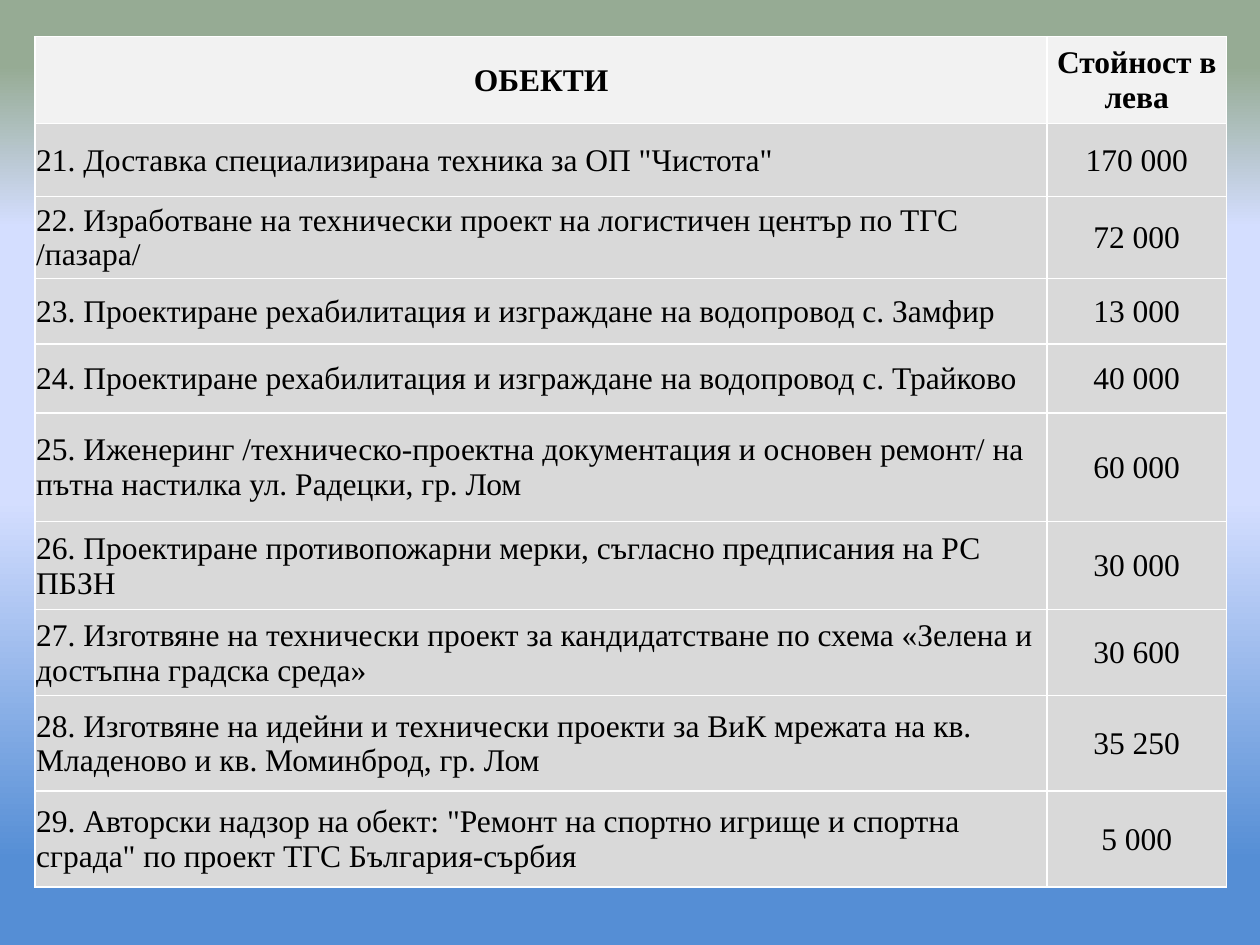
from lxml import etree
from pptx import Presentation
from pptx.dml.color import RGBColor
from pptx.enum.text import MSO_ANCHOR, PP_ALIGN
from pptx.oxml.ns import qn
from pptx.util import Cm, Pt

LEFT, CENTER = PP_ALIGN.LEFT, PP_ALIGN.CENTER
MIDDLE = MSO_ANCHOR.MIDDLE

BLACK, WHITE = "000000", "FFFFFF"
HEADER_FILL, BODY_FILL = "F2F2F2", "D9D9D9"
SKY_STOPS = [(9, "558ED5"), (47, "D4DEFF"), (76, "D4DEFF"), (93, "96AB94")]
CELL_FORMAT = {
    "vertical_anchor": MIDDLE,
    "margin_left": Cm(0.02),
    "margin_right": Cm(0.02),
    "margin_top": Cm(0.02),
    "margin_bottom": Cm(0),
}
FONT_FORMAT = {"name": "Times New Roman", "size": Pt(18)}

TABLE_BOX = (0.71, 0.74, 24.01, 17.14)
PRICE_WIDTH = 3.61
ROWS = [
    (1.75, "ОБЕКТИ", "Стойност в лева"),
    (1.47, '21. Доставка специализирана техника за ОП "Чистота"', "170 000"),
    (1.65, "22. Изработване на технически проект на логистичен център по ТГС /пазара/", "72 000"),
    (1.32, "23. Проектиране рехабилитация и изграждане на водопровод с. Замфир", "13 000"),
    (1.4, "24. Проектиране рехабилитация и изграждане на водопровод с. Трайково", "40 000"),
    (2.18, "25. Иженеринг /техническо-проектна документация и основен ремонт/ "
           "на пътна настилка ул. Радецки, гр. Лом", "60 000"),
    (1.78, "26. Проектиране противопожарни мерки, съгласно предписания на РС ПБЗН", "30 000"),
    (1.73, "27. Изготвяне на технически проект за кандидатстване по схема "
           "«Зелена и достъпна градска среда»", "30 600"),
    (1.93, "28. Изготвяне на идейни и технически проекти за ВиК мрежата "
           "на кв. Младеново и кв. Моминброд, гр. Лом", "35 250"),
    (1.93, '29. Авторски надзор на обект: "Ремонт на спортно игрище и спортна сграда" '
           "по проект ТГС България-сърбия", "5 000"),
]


def rgb(color):
    return RGBColor.from_string(color)


def set_format(obj, values):
    for name, value in values.items():
        setattr(obj, name, value)


def add_color(parent, color):
    etree.SubElement(parent, qn("a:srgbClr"), val=color)


def add_background(slide, stops):
    fill = slide.background.fill
    fill.gradient()
    fill.gradient_angle = 90
    stop_list = slide.element.find(".//" + qn("a:gsLst"))
    for stop in list(stop_list):
        stop_list.remove(stop)
    for percent, color in stops:
        add_color(etree.SubElement(stop_list, qn("a:gs"), pos=str(percent * 1000)), color)


def add_borders(cell, color, width):
    tc_pr = cell._tc.get_or_add_tcPr()
    for i, side in enumerate(("lnL", "lnR", "lnT", "lnB")):
        line = etree.Element(qn("a:" + side), w=str(Pt(width)))
        add_color(etree.SubElement(line, qn("a:solidFill")), color)
        tc_pr.insert(i, line)


def fill_cell(cell, text, fill, align, bold):
    set_format(cell, CELL_FORMAT)
    cell.fill.solid()
    cell.fill.fore_color.rgb = rgb(fill)
    add_borders(cell, WHITE, 1)
    p = cell.text_frame.paragraphs[0]
    p.alignment = align
    r = p.add_run()
    r.text = text
    set_format(r.font, {**FONT_FORMAT, "bold": bold})
    r.font.color.rgb = rgb(BLACK)


def add_price_table(slide, box, rows):
    left, top, width, height = box
    table = slide.shapes.add_table(
        len(rows), 2, Cm(left), Cm(top), Cm(width), Cm(height)).table
    table.columns[0].width = Cm(width - PRICE_WIDTH)
    table.columns[1].width = Cm(PRICE_WIDTH)
    for i, (row_height, item, price) in enumerate(rows):
        header = i == 0
        fill = HEADER_FILL if header else BODY_FILL
        table.rows[i].height = Cm(row_height)
        fill_cell(table.cell(i, 0), item, fill, CENTER if header else LEFT, header)
        fill_cell(table.cell(i, 1), price, fill, CENTER, header)


def main():
    prs = Presentation()
    prs.slide_width, prs.slide_height = Cm(25.4), Cm(19.05)
    slide = prs.slides.add_slide(prs.slide_layouts[6])
    add_background(slide, SKY_STOPS)
    add_price_table(slide, TABLE_BOX, ROWS)
    prs.save("out.pptx")


if __name__ == "__main__":
    main()
